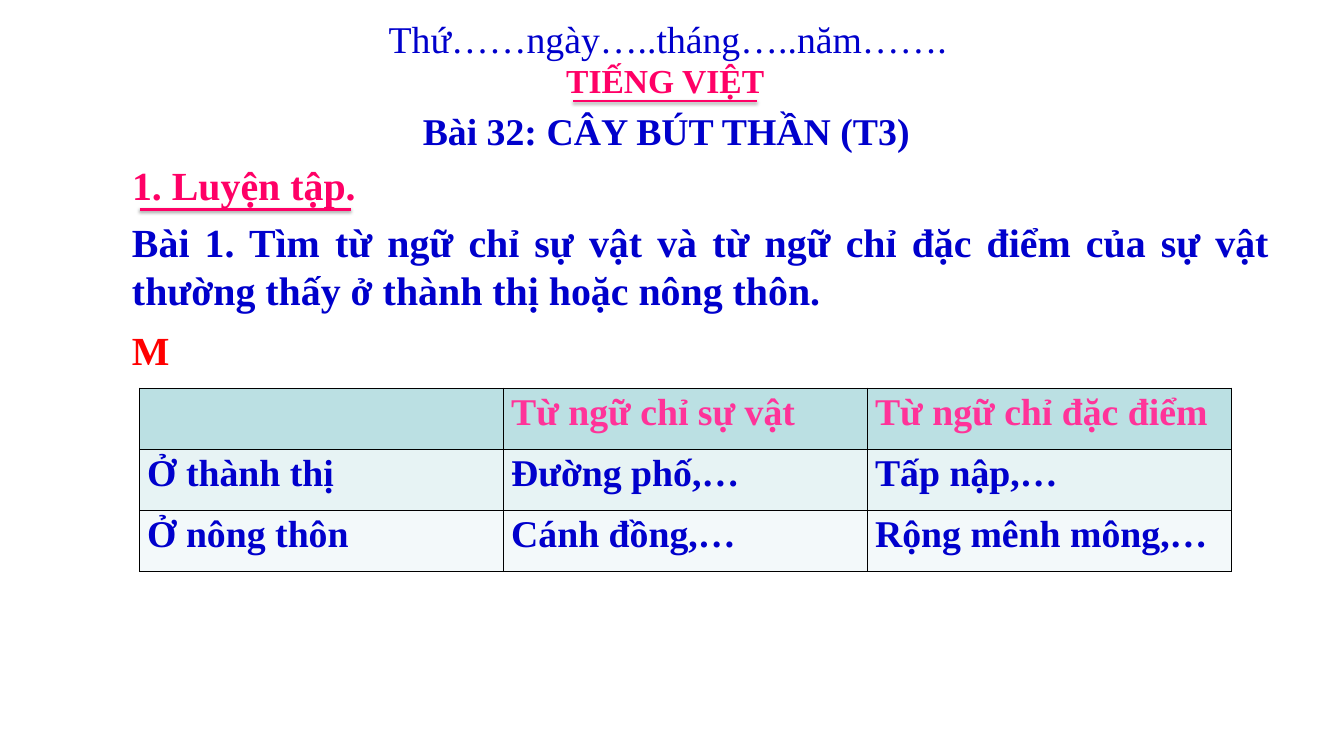
"""Build the Vietnamese lesson slide with its headings and vocabulary table."""
from lxml import etree
from pptx import Presentation
from pptx.dml.color import RGBColor
from pptx.enum.shapes import MSO_CONNECTOR
from pptx.enum.text import MSO_ANCHOR, PP_ALIGN
from pptx.oxml.ns import qn
from pptx.util import Inches, Pt

FONT = "Times New Roman"
BLUE = RGBColor(0x00, 0x00, 0xCC)
ROSE = RGBColor(0xFF, 0x00, 0x66)
PINK = RGBColor(0xFF, 0x33, 0x99)
RED = RGBColor(0xFF, 0x00, 0x00)
LEFT, CENTER, JUSTIFY = PP_ALIGN.LEFT, PP_ALIGN.CENTER, PP_ALIGN.JUSTIFY
TOP = MSO_ANCHOR.TOP
STRAIGHT = MSO_CONNECTOR.STRAIGHT

TITLE = ("Bài 32: CÂY BÚT THẦN (T3)", (5.47, 1.38, 6.71, 0.71), 36, BLUE, True, CENTER, False)
TEXTS = [
    ("Thứ……ngày…..tháng…..năm…….", (5.05, 0.16, 7.67, 0.71), 36, BLUE, False, LEFT, False),
    ("TIẾNG VIỆT", (7.4, 0.75, 2.85, 0.64), 32, ROSE, True, LEFT, False),
    ("1. Luyện tập.", (1.65, 2.08, 4.58, 0.74), 38, ROSE, True, LEFT, True),
    ("Bài 1. Tìm từ ngữ chỉ sự vật và từ ngữ chỉ đặc điểm của sự vật "
     "thường thấy ở thành thị hoặc nông thôn.",
     (1.65, 2.83, 15.27, 1.38), 38, BLUE, True, JUSTIFY, True),
    ("M", (1.65, 4.27, 15.27, 0.74), 38, RED, True, JUSTIFY, True),
]
UNDERLINES = [
    (7.59, 10.03, 1.34, 2, 1.6, 38),
    (1.85, 4.65, 2.77, 3, 1.8, 35),
]
ROWS = [
    ("", "Từ ngữ chỉ sự vật", "Từ ngữ chỉ đặc điểm"),
    ("Ở thành thị", "Đường phố,…", "Tấp nập,…"),
    ("Ở nông thôn", "Cánh đồng,…", "Rộng mênh mông,…"),
]
ROW_STYLES = [
    (RGBColor(0xBB, 0xE0, 0xE3), PINK),
    (RGBColor(0xE7, 0xF3, 0xF4), BLUE),
    (RGBColor(0xF3, 0xF9, 0xFA), BLUE),
]
TABLE_LEFT, TABLE_TOP, COLUMN_WIDTH, ROW_HEIGHT = 1.85, 5.14, 4.82, 0.81


def style_paragraph(para, size, color, bold):
    para.font.name = FONT
    para.font.size = Pt(size)
    para.font.bold = bold
    para.font.color.rgb = color


def fill_box(box, text, place, size, color, bold, align, wrap):
    box.left, box.top, box.width, box.height = map(Inches, place)
    frame = box.text_frame
    frame.text = text
    frame.word_wrap = wrap
    frame.vertical_anchor = TOP
    frame.margin_left = frame.margin_right = Inches(0.1)
    frame.margin_top = frame.margin_bottom = Inches(0.05)
    para = frame.paragraphs[0]
    para.alignment = align
    style_paragraph(para, size, color, bold)


def add_underline(slide, start, end, top, width, distance, opacity):
    line = slide.shapes.add_connector(
        STRAIGHT, Inches(start), Inches(top), Inches(end), Inches(top))
    line.line.color.rgb = ROSE
    line.line.width = Pt(width)
    effects = etree.SubElement(line._element.spPr, qn("a:effectLst"))
    shadow = etree.SubElement(
        effects, qn("a:outerShdw"), blurRad=str(Pt(3.1)), dist=str(Pt(distance)),
        dir="5400000", rotWithShape="0")
    black = etree.SubElement(shadow, qn("a:srgbClr"), val="000000")
    etree.SubElement(black, qn("a:alpha"), val=str(opacity * 1000))


def add_borders(cell):
    properties = cell._tc.get_or_add_tcPr()
    for index, side in enumerate(("lnL", "lnR", "lnT", "lnB")):
        border = etree.Element(qn(f"a:{side}"), w=str(Pt(1)))
        fill = etree.SubElement(border, qn("a:solidFill"))
        etree.SubElement(fill, qn("a:srgbClr"), val="000000")
        properties.insert(index, border)


def add_word_table(slide):
    count = len(ROWS[0])
    table = slide.shapes.add_table(
        len(ROWS), count, Inches(TABLE_LEFT), Inches(TABLE_TOP),
        Inches(COLUMN_WIDTH * count), Inches(ROW_HEIGHT * len(ROWS))).table
    for row, words, (fill, color) in zip(table.rows, ROWS, ROW_STYLES):
        for cell, text in zip(row.cells, words):
            cell.text = text
            cell.fill.solid()
            cell.fill.fore_color.rgb = fill
            style_paragraph(cell.text_frame.paragraphs[0], 36, color, True)
            add_borders(cell)


def main():
    deck = Presentation()
    deck.slide_width, deck.slide_height = Inches(17.8), Inches(10)
    slide = deck.slides.add_slide(deck.slide_layouts[5])
    fill_box(slide.shapes.title, *TITLE)
    for text in TEXTS:
        fill_box(slide.shapes.add_textbox(0, 0, 0, 0), *text)
    for underline in UNDERLINES:
        add_underline(slide, *underline)
    add_word_table(slide)
    deck.save("out.pptx")


if __name__ == "__main__":
    main()
